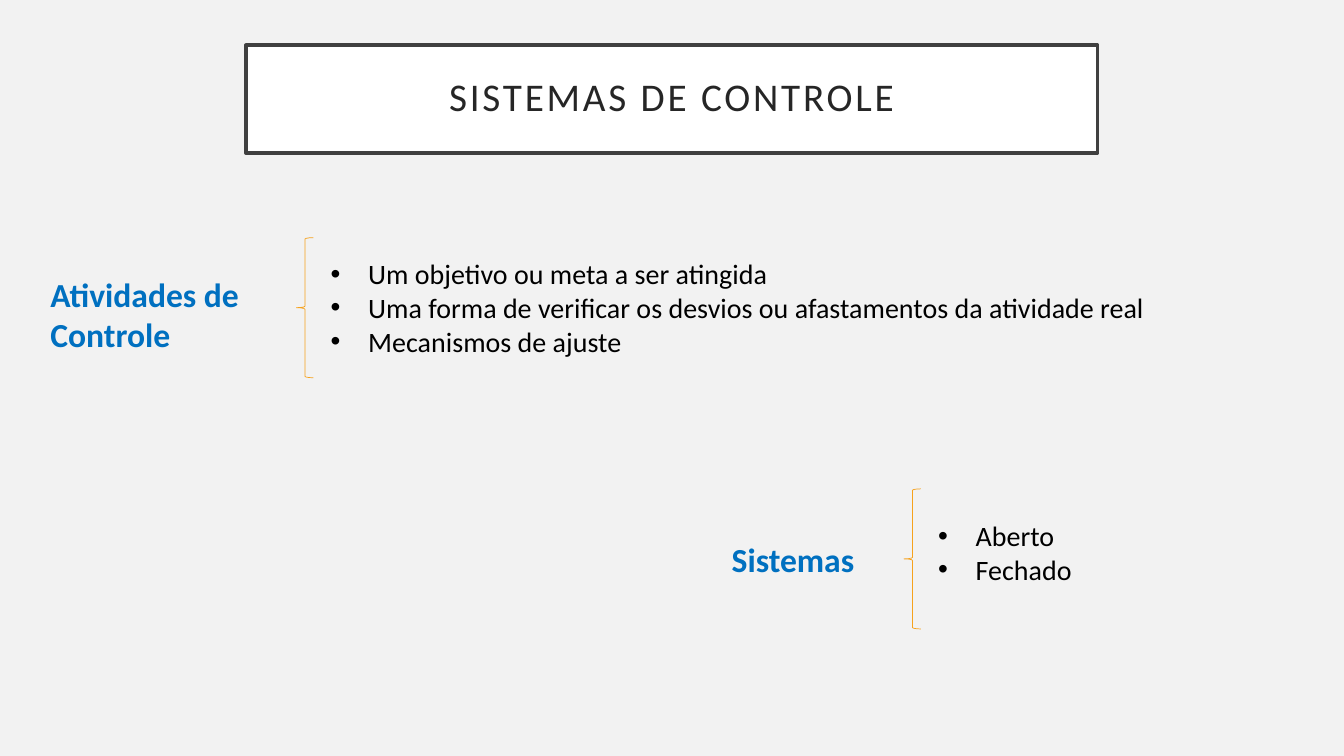
from dataclasses import dataclass

from lxml.etree import SubElement
from pptx import Presentation
from pptx.dml.color import RGBColor
from pptx.enum.shapes import MSO_SHAPE
from pptx.enum.text import MSO_ANCHOR, PP_ALIGN
from pptx.oxml.ns import qn
from pptx.util import Cm, Pt


@dataclass(frozen=True)
class Theme:
    """Colours, font and type sizes of the slide."""
    back: str = "F2F2F2"
    panel: str = "FFFFFF"
    frame: str = "404040"
    title: str = "262626"
    label: str = "0070C0"
    brace: str = "F6A21D"
    body: str = "000000"
    font: str = "Calibri"
    title_size: int = 28
    label_size: int = 24
    body_size: int = 20


THEME = Theme()


def color(code):
    """Turn a hex code into a colour."""
    return RGBColor.from_string(code)


def style(frame, size, tint, bold=False):
    """Format every run of a text frame."""
    for para in frame.paragraphs:
        for run in para.runs:
            font = run.font
            font.name, font.size, font.bold = THEME.font, Pt(size), bold
            font.color.rgb = color(tint)


def add_text(slide, box, text, size, tint, bold=False):
    """Add a wrapping text box and return its frame."""
    frame = slide.shapes.add_textbox(*map(Cm, box)).text_frame
    frame.word_wrap = True
    frame.text = text
    style(frame, size, tint, bold)
    return frame


def add_title(slide, box, text):
    """Draw the framed title in its box."""
    panel = slide.shapes.add_shape(MSO_SHAPE.RECTANGLE, *map(Cm, box))
    panel.shadow.inherit = False
    panel.fill.solid()
    panel.fill.fore_color.rgb = color(THEME.panel)
    panel.line.color.rgb = color(THEME.frame)
    panel.line.width = Pt(2.5)
    frame = panel.text_frame
    frame.word_wrap = True
    frame.vertical_anchor = MSO_ANCHOR.MIDDLE
    frame.margin_left = frame.margin_right = Cm(0.5)
    frame.margin_top = frame.margin_bottom = Cm(0.5)
    frame.text = text
    style(frame, THEME.title_size, THEME.title)
    para = frame.paragraphs[0]
    para.alignment = PP_ALIGN.CENTER
    para.line_spacing = 0.9
    para.runs[0].font._element.set("spc", "200")


def add_brace(slide, box):
    """Draw a thin left brace in its box."""
    brace = slide.shapes.add_shape(MSO_SHAPE.LEFT_BRACE, *map(Cm, box))
    brace.shadow.inherit = False
    brace.fill.background()
    brace.line.color.rgb = color(THEME.brace)
    brace.line.width = Pt(0.5)


def add_list(slide, box, items):
    """Write a bulleted list in its box."""
    frame = add_text(slide, box, "\n".join(items), THEME.body_size, THEME.body)
    indent = Cm(0.95)
    for para in frame.paragraphs:
        props = para._p.get_or_add_pPr()
        props.set("marL", str(indent))
        props.set("indent", str(-indent))
        SubElement(props, qn("a:buFont"), typeface="Arial")
        SubElement(props, qn("a:buChar"), char="•")


def add_group(slide, box, label, items, lead, label_drop, list_drop):
    """Place a label, a brace and a list across the given box."""
    left, top, width, height = box
    shift = lead + 0.61
    add_text(slide, (left, top + label_drop, 6.88, height - 2 * label_drop),
             label, THEME.label_size, THEME.label, True)
    add_brace(slide, (left + lead, top, 0.43, height))
    add_list(slide, (left + shift, top + list_drop, width - shift,
                     height - 2 * list_drop), items)


def main():
    """Build and save the slide."""
    deck = Presentation()
    deck.slide_width, deck.slide_height = Cm(33.87), Cm(19.05)
    slide = deck.slides.add_slide(deck.slide_layouts[6])
    fill = slide.background.fill
    fill.solid()
    fill.fore_color.rgb = color(THEME.back)
    add_title(slide, (6.2, 1.14, 21.46, 2.72), "SISTEMAS DE CONTROLE")
    add_group(slide, (1.02, 5.99, 28.9, 3.53), "Atividades de Controle",
              ("Um objetivo ou meta a ser atingida",
               "Uma forma de verificar os desvios ou afastamentos da atividade real",
               "Mecanismos de ajuste"), 6.45, 0.79, 0.36)
    add_group(slide, (18.19, 12.32, 10.74, 3.53), "Sistemas",
              ("Aberto", "Fechado"), 4.59, 1.14, 0.63)
    deck.save("out.pptx")


if __name__ == "__main__":
    main()
